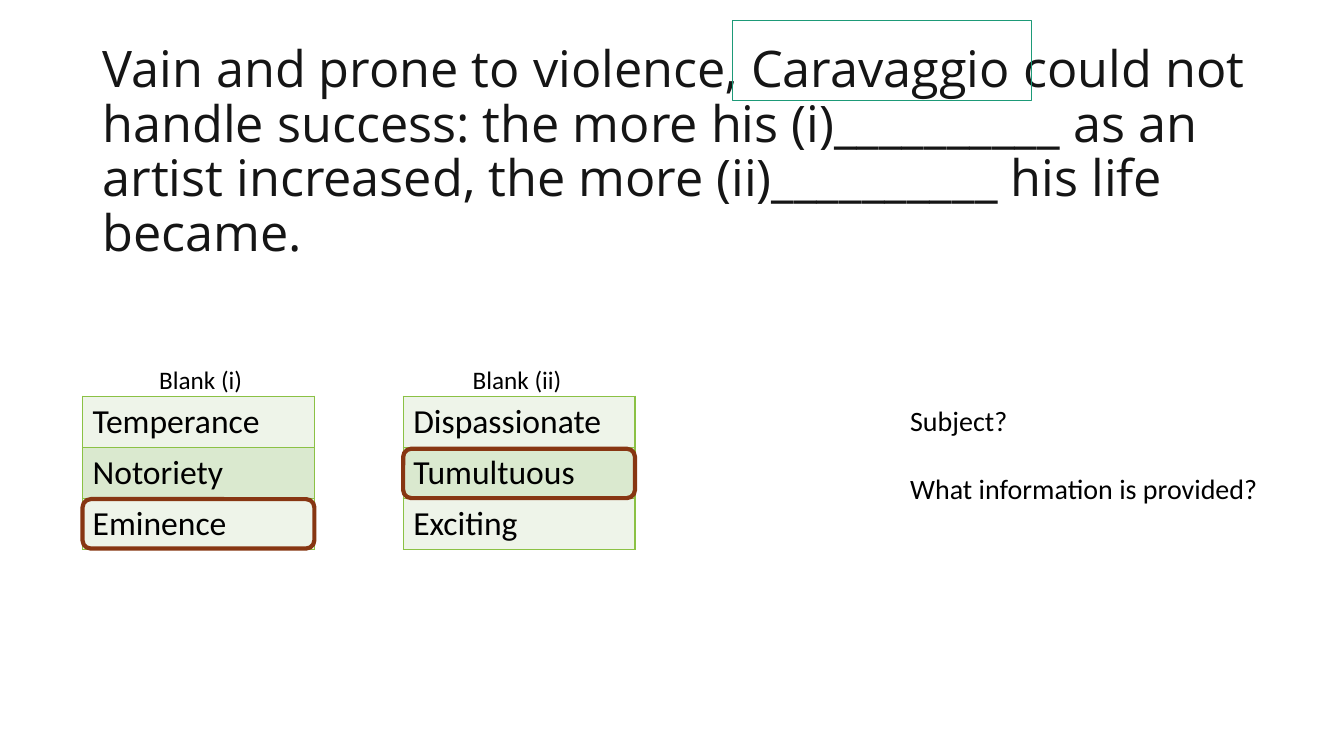
from lxml import etree
from pptx import Presentation
from pptx.dml.color import RGBColor
from pptx.enum.shapes import MSO_SHAPE
from pptx.enum.text import MSO_ANCHOR, MSO_AUTO_SIZE, PP_ALIGN
from pptx.oxml.ns import qn
from pptx.util import Pt

RECTANGLE = MSO_SHAPE.RECTANGLE
ROUNDED = MSO_SHAPE.ROUNDED_RECTANGLE
LEFT = PP_ALIGN.LEFT
TOP, MIDDLE = MSO_ANCHOR.TOP, MSO_ANCHOR.MIDDLE
FIXED_SIZE = MSO_AUTO_SIZE.NONE

COLUMN_LEFTS = (59, 288)
COLUMN_WIDTH = 165.6
CHOICES_TOP = 283
ROW_HEIGHT = 36
CHOICES = (
    (("Temperance", "Notoriety", "Eminence"), 2),
    (("Dispassionate", "Tumultuous", "Exciting"), 1),
)
QUESTION = (
    "Vain and prone to violence, Caravaggio could not handle success: "
    "the more his (i)__________ as an artist increased, "
    "the more (ii)__________ his life became."
)


def color(value):
    return RGBColor.from_string(value)


def write(frame, text, font="Calibri", size=20, ink="000000", anchor=TOP,
          line_spacing=None, gap=0, tab=None):
    frame.word_wrap = True
    frame.auto_size = FIXED_SIZE
    frame.vertical_anchor = anchor
    for index, line in enumerate(text.split("\n")):
        paragraph = frame.add_paragraph() if index else frame.paragraphs[0]
        paragraph.alignment = LEFT
        paragraph.space_before = Pt(gap if index else 0)
        if line_spacing:
            paragraph.line_spacing = line_spacing
        if tab:
            properties = paragraph._p.get_or_add_pPr()
            tabs = etree.SubElement(properties, qn("a:tabLst"))
            etree.SubElement(tabs, qn("a:tab"), pos=str(Pt(tab)), algn="l")
        run = paragraph.add_run()
        run.text = line
        run.font.name = font
        run.font.size = Pt(size)
        run.font.color.rgb = color(ink)


class QuizSlide:
    border = "8BC145"
    bands = ("EEF4E9", "DAE9CF")

    def __init__(self, presentation):
        self.slide = presentation.slides.add_slide(presentation.slide_layouts[5])
        self.shapes = self.slide.shapes

    def title(self, text, left, top, width, height):
        shape = self.shapes.title
        shape.left, shape.top = Pt(left), Pt(top)
        shape.width, shape.height = Pt(width), Pt(height)
        write(shape.text_frame, text, font="Open Sans", size=36, ink="151515",
              anchor=MIDDLE, line_spacing=0.9)

    def text(self, text, left, top, width, height, **style):
        shape = self.shapes.add_textbox(Pt(left), Pt(top), Pt(width), Pt(height))
        write(shape.text_frame, text, **style)

    def outline(self, kind, left, top, width, height, line, weight):
        shape = self.shapes.add_shape(kind, Pt(left), Pt(top), Pt(width), Pt(height))
        shape.shadow.inherit = False
        shape.fill.background()
        shape.line.color.rgb = color(line)
        shape.line.width = Pt(weight)

    def choices(self, words, left, top, width):
        frame = self.shapes.add_table(len(words), 1, Pt(left), Pt(top), Pt(width),
                                      Pt(ROW_HEIGHT * len(words)))
        table = frame.table
        table.first_row = table.horz_banding = False
        for index, word in enumerate(words):
            cell = table.cell(index, 0)
            properties = cell._tc.get_or_add_tcPr()
            for side in ("L", "R", "T", "B"):
                edge = etree.SubElement(properties, qn(f"a:ln{side}"), w=str(Pt(1)))
                fill = etree.SubElement(edge, qn("a:solidFill"))
                etree.SubElement(fill, qn("a:srgbClr"), val=self.border)
            cell.fill.solid()
            cell.fill.fore_color.rgb = color(self.bands[index % 2])
            write(cell.text_frame, word, size=24)


def main():
    presentation = Presentation()
    presentation.slide_width, presentation.slide_height = Pt(960), Pt(540)
    quiz = QuizSlide(presentation)
    quiz.title(QUESTION, 66, 53.5, 852, 112)
    quiz.text("Subject?\nWhat information is provided?", 643, 285, 275, 80, gap=24)
    quiz.outline(RECTANGLE, 523.5, 14.4, 213, 57.6, "1D9A78", 0.5)
    for left, (words, answer) in zip(COLUMN_LEFTS, CHOICES):
        quiz.choices(words, left, CHOICES_TOP, COLUMN_WIDTH)
        quiz.outline(ROUNDED, left, CHOICES_TOP + 1.5 + answer * ROW_HEIGHT,
                     COLUMN_WIDTH, 35.3, "873612", 3)
    quiz.text("Blank (i)\tBlank (ii)", 106.6, 257, 305, 29, size=18, tab=224)
    presentation.save("out.pptx")


if __name__ == "__main__":
    main()
